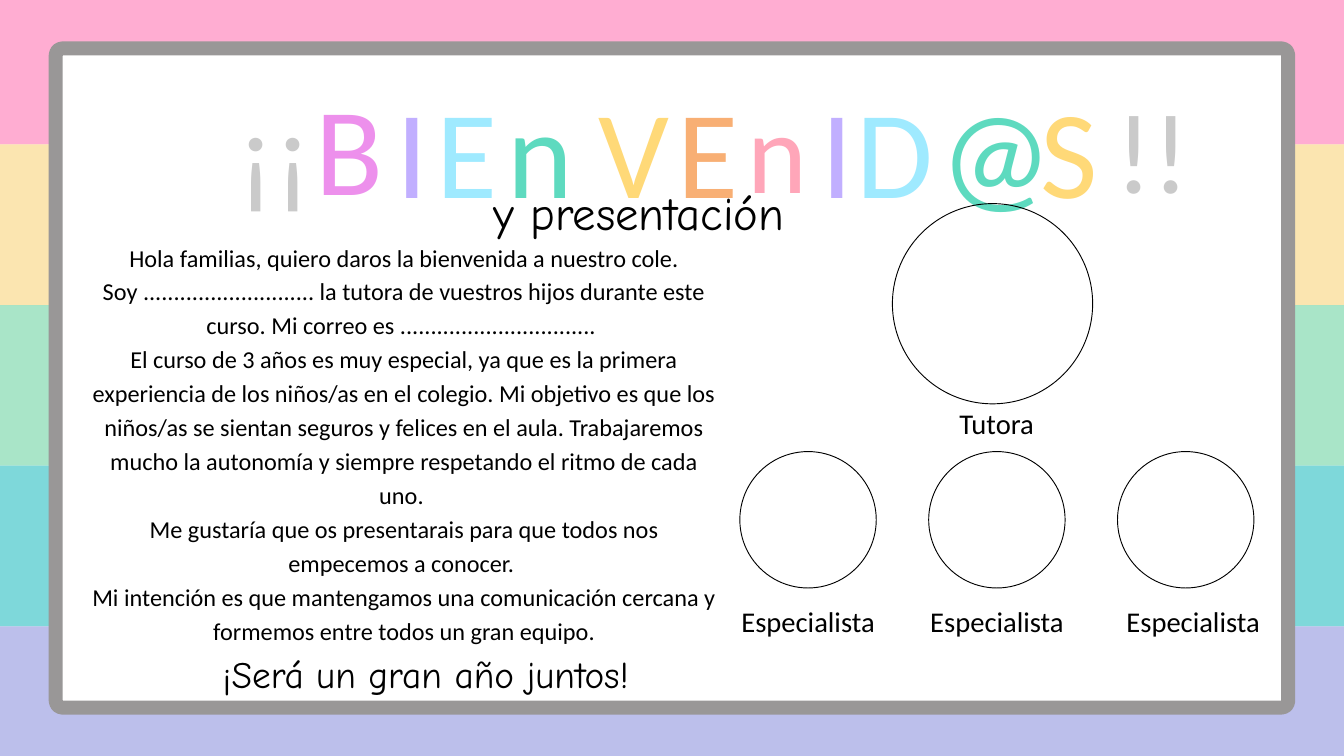
from dataclasses import dataclass

from lxml import etree
from pptx import Presentation
from pptx.dml.color import RGBColor
from pptx.enum.shapes import MSO_SHAPE
from pptx.enum.text import MSO_ANCHOR, MSO_AUTO_SIZE, PP_ALIGN
from pptx.oxml.ns import qn
from pptx.util import Emu, Pt

PX = 9144  # 100 px to the inch
RECT, ROUND, OVAL = MSO_SHAPE.RECTANGLE, MSO_SHAPE.ROUNDED_RECTANGLE, MSO_SHAPE.OVAL
CENTER, TOP, GROW = PP_ALIGN.CENTER, MSO_ANCHOR.TOP, MSO_AUTO_SIZE.SHAPE_TO_FIT_TEXT
FRAME = {"margin_left": 0, "margin_right": 0, "margin_top": 0, "margin_bottom": 0,
         "word_wrap": True, "vertical_anchor": TOP, "auto_size": GROW}


@dataclass
class Box:
    x: int
    y: int
    w: int
    h: int


@dataclass
class Style:
    size: float
    lead: float
    font: str = "Calibri"
    ink: str = "000000"


@dataclass
class Letter:
    text: str
    box: Box
    ink: str
    small: bool = False


def emu(n: int) -> Emu:
    return Emu(n * PX)


def color(code: str) -> RGBColor:
    return RGBColor.from_string(code)


def place(shape, box: Box) -> None:
    shape.left, shape.top = emu(box.x), emu(box.y)
    shape.width, shape.height = emu(box.w), emu(box.h)


def draw(slide, kind, box: Box, fill: str = "", line: str = "", width: float = 1):
    """Add a preset shape; an empty colour means none."""
    shape = slide.shapes.add_shape(kind, emu(box.x), emu(box.y), emu(box.w), emu(box.h))
    shape.shadow.inherit = False
    if fill:
        shape.fill.solid()
        shape.fill.fore_color.rgb = color(fill)
    else:
        shape.fill.background()
    if line:
        shape.line.color.rgb = color(line)
        shape.line.width = Pt(width)
    else:
        shape.line.fill.background()
    return shape


def fade(shape, percent: int) -> None:
    """Set the opacity of a solid fill."""
    tint = shape.fill._xPr.find(f"{qn('a:solidFill')}/{qn('a:srgbClr')}")
    etree.SubElement(tint, qn("a:alpha")).set("val", str(percent * 1000))


def write(shape, box: Box, lines: list[str], style: Style) -> None:
    frame = shape.text_frame
    for name, value in FRAME.items():
        setattr(frame, name, value)
    frame.text = "\n".join(lines)
    form = {"size": Pt(style.size), "name": style.font}
    for para in frame.paragraphs:
        para.alignment = CENTER
        para.line_spacing = Pt(style.lead)
        para.space_before = Pt(0)
        for run in para.runs:
            for name, value in form.items():
                setattr(run.font, name, value)
            run.font.color.rgb = color(style.ink)
    place(shape, box)


def label(slide, box: Box, lines: list[str], style: Style) -> None:
    shape = slide.shapes.add_textbox(0, 0, 0, 0)
    write(shape, box, lines, style)


BANDS = ["FF8BC0", "FADA8F", "85DAB1", "48C8CB", "A0A4E3"]

LETTERS = [
    Letter("B", Box(466, 68, 108, 252), "ED90EC"),
    Letter("I", Box(551, 72, 125, 245), "C1AFFF"),
    Letter("E", Box(627, 72, 136, 245), "9FEAFF"),
    Letter("n", Box(752, 72, 103, 245), "5EDABF"),
    Letter("V", Box(887, 72, 112, 245), "FFD978"),
    Letter("E", Box(999, 72, 108, 245), "F8AF74"),
    Letter("n", Box(1108, 84, 99, 222), "FFA6B9", True),
    Letter("I", Box(1183, 72, 125, 245), "C1AFFF"),
    Letter("D", Box(1264, 72, 136, 245), "9FEAFF"),
    Letter("@", Box(1400, 72, 103, 245), "5EDABF"),
    Letter("S", Box(1535, 72, 112, 245), "FFD978"),
    Letter("!!", Box(1639, 84, 151, 222), "CACACA", True),
    Letter("¡¡", Box(258, 85, 302, 222), "CACACA", True),
]

BODY = [
    "Hola familias, quiero daros la bienvenida a nuestro cole. "
    "Soy ............................ la tutora de vuestros hijos durante este curso. "
    "Mi correo es ................................ ",
    "El curso de 3 años es muy especial, ya que es la primera experiencia de los "
    "niños/as en el colegio. Mi objetivo es que los niños/as se sientan seguros y "
    "felices en el aula. Trabajaremos mucho la autonomía y siempre respetando el "
    "ritmo de cada uno. ",
    "Me gustaría que os presentarais para que todos nos empecemos a conocer. ",
    "Mi intención es que mantengamos una comunicación cercana y formemos entre todos "
    "un gran equipo.",
]


def main() -> None:
    deck = Presentation()
    deck.slide_width, deck.slide_height = emu(2000), emu(1125)
    slide = deck.slides.add_slide(deck.slide_layouts[5])

    # Striped backdrop and whiteboard
    for i, tint in enumerate(BANDS):
        fade(draw(slide, RECT, Box(-105, -24 + 239 * i, 2210, 239), tint), 70)
    board = draw(slide, ROUND, Box(83, 72, 1834, 981), "FFFFFF", "999797", 15)
    board.adjustments[0] = 0.01

    # Welcome lettering
    for item in LETTERS:
        size, lead = (122, 170.7) if item.small else (133.8, 187.4)
        label(slide, item.box, [item.text], Style(size, lead, ink=item.ink))

    # Title, raised above the board
    title = slide.shapes.title
    write(title, Box(674, 260, 554, 94), ["y presentación"], Style(50, 70, "Comic Neue"))
    title.element.getparent().append(title.element)

    # Letter to the families
    label(slide, Box(134, 354, 935, 599), BODY, Style(26, 36.4))
    label(slide, Box(267, 958, 733, 73), ["¡Será un gran año juntos!"],
          Style(40, 56, "Comic Neue"))

    # Photo circles with their captions
    role = Style(30.6, 42.9)
    draw(slide, OVAL, Box(1328, 303, 298, 298), line="000000")
    label(slide, Box(1419, 595, 128, 57), ["Tutora"], role)
    for i, left in enumerate([1083, 1364, 1656]):
        draw(slide, OVAL, Box(1101 + 281 * i, 672, 203, 203), line="000000")
        label(slide, Box(left, 890, 239, 57), ["Especialista"], role)

    deck.save("out.pptx")


if __name__ == "__main__":
    main()
